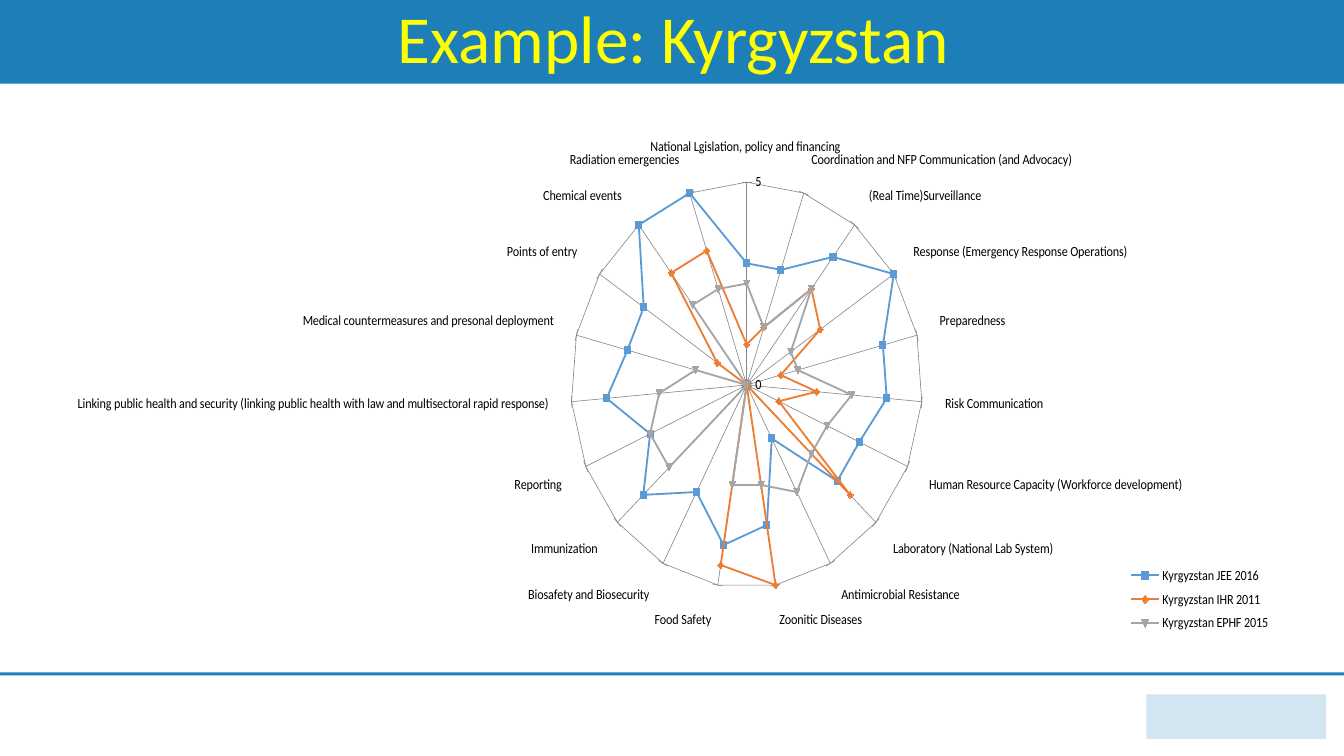
from lxml import etree
from pptx import Presentation
from pptx.chart.data import CategoryChartData
from pptx.dml.color import RGBColor
from pptx.enum.chart import XL_CHART_TYPE, XL_LEGEND_POSITION, XL_TICK_MARK
from pptx.enum.shapes import MSO_SHAPE
from pptx.enum.text import MSO_ANCHOR, PP_ALIGN
from pptx.oxml.ns import qn
from pptx.util import Inches, Pt

TITLE = "Example: Kyrgyzstan"
BLUE, YELLOW, GRID, PALE = "1E7FB8", "FFFF00", "878787", "D2E5F1"
BARS = [
    (0, 0, 13.33, 0.83, BLUE),
    (0, 6.67, 13.33, 0.03, BLUE),
    (11.37, 6.89, 1.78, 0.44, PALE),
]
CAPACITIES = [
    "National Lgislation, policy and financing ",
    "Coordination and NFP Communication (and Advocacy)",
    "(Real Time)Surveillance ",
    "Response (Emergency Response Operations)",
    "Preparedness",
    "Risk Communication ",
    "Human Resource Capacity (Workforce development)",
    "Laboratory (National Lab System)",
    "Antimicrobial Resistance",
    "Zoonitic Diseases",
    "Food Safety ",
    "Biosafety and Biosecurity ",
    "Immunization ",
    "Reporting ",
    "Linking public health and security (linking public health with law and multisectoral rapid response)",
    "Medical countermeasures and presonal deployment",
    "Points of entry ",
    "Chemical events ",
    "Radiation emergencies ",
]
ASSESSMENTS = [
    ("Kyrgyzstan JEE 2016", "5B9BD5",
     [3, 3, 4, 5, 4, 4, 3.5, 3.5, 1.5, 3.5, 4, 3, 4, 3, 4, 3.5, 3.5, 5, 5]),
    ("Kyrgyzstan IHR 2011", "ED7D31",
     [1, 1.5, 3, 2.5, 1, 2, 1, 4, 0, 5, 4.5, 0, 0, 0, 0, 0, 1, 3.5, 3.5]),
    ("Kyrgyzstan EPHF 2015", "A5A5A5",
     [2.5, 1.5, 3, 1.5, 1.5, 3, 2.5, 2.5, 3, 2.5, 2.5, 0, 3, 3, 2.5, 1.5, 0, 2.5, 2.5]),
]


def paint(color_format, color):
    color_format.rgb = RGBColor.from_string(color)


def fill(target, color):
    target.fill.solid()
    paint(target.fill.fore_color, color)


def stroke(line, color, width):
    line.width = Pt(width)
    paint(line.color, color)


def place(parent, index, x, y, w, h, inner=False):
    for old in parent.findall(qn("c:layout")):
        parent.remove(old)
    layout = etree.Element(qn("c:layout"))
    manual = etree.SubElement(layout, qn("c:manualLayout"))
    settings = [("layoutTarget", "inner")] if inner else []
    settings += [("xMode", "edge"), ("yMode", "edge"), ("x", x), ("y", y), ("w", w), ("h", h)]
    for tag, value in settings:
        etree.SubElement(manual, qn("c:" + tag)).set("val", str(value))
    parent.insert(index, layout)


def add_bar(s, x, y, w, h, color):
    sp = s.shapes.add_shape(MSO_SHAPE.RECTANGLE, Inches(x), Inches(y), Inches(w), Inches(h))
    sp.shadow.inherit = False
    fill(sp, color)
    sp.line.fill.background()


def add_title(s):
    tf = s.shapes.add_textbox(Inches(0.68), Inches(0.03), Inches(12), Inches(0.77)).text_frame
    tf.word_wrap = True
    tf.vertical_anchor = MSO_ANCHOR.MIDDLE
    p = tf.paragraphs[0]
    p.text = TITLE
    p.alignment = PP_ALIGN.CENTER
    p.line_spacing = 0.9
    p.font.size = Pt(48)
    p.font.name = "Calibri"
    paint(p.font.color, YELLOW)


def add_radar(s):
    data = CategoryChartData()
    data.categories = CAPACITIES
    for name, _, scores in ASSESSMENTS:
        data.add_series(name, scores)
    chart = s.shapes.add_chart(
        XL_CHART_TYPE.RADAR_MARKERS, Inches(0.77), Inches(1.07), Inches(12.07), Inches(5.67), data
    ).chart
    chart.has_title = False
    chart.font.size = Pt(10)
    chart.font.name = "Calibri"
    paint(chart.font.color, "000000")

    plot = chart.plots[0]
    plot.vary_by_categories = False
    for series, (_, color, _) in zip(plot.series, ASSESSMENTS):
        series.smooth = False
        stroke(series.format.line, color, 1.5)
        series.marker.size = 5
        fill(series.marker.format, color)
        stroke(series.marker.format.line, color, 0.75)

    for axis, tick in ((chart.category_axis, XL_TICK_MARK.OUTSIDE), (chart.value_axis, XL_TICK_MARK.CROSS)):
        axis.has_major_gridlines = True
        axis.major_tick_mark = tick
        stroke(axis.major_gridlines.format.line, GRID, 0.5)
        stroke(axis.format.line, GRID, 0.5)
    scale = chart.value_axis
    scale.minimum_scale, scale.maximum_scale, scale.major_unit = 0, 5, 5
    scale.tick_labels.number_format = "0"
    scale.tick_labels.number_format_is_linked = False

    chart.has_legend = True
    legend = chart.legend
    legend.position = XL_LEGEND_POSITION.RIGHT
    legend.include_in_layout = False
    plot_area = chart.element.find(".//" + qn("c:plotArea"))
    place(plot_area, 0, 0.26, 0.13, 0.44, 0.71, inner=True)
    place(chart.element.find(".//" + qn("c:legend")), 1, 0.83, 0.79, 0.16, 0.14)


def main():
    prs = Presentation()
    prs.slide_width, prs.slide_height = Inches(13.33), Inches(7.5)
    s = prs.slides.add_slide(prs.slide_layouts[6])
    for bar in BARS:
        add_bar(s, *bar)
    add_title(s)
    add_radar(s)
    prs.save("out.pptx")


if __name__ == "__main__":
    main()
